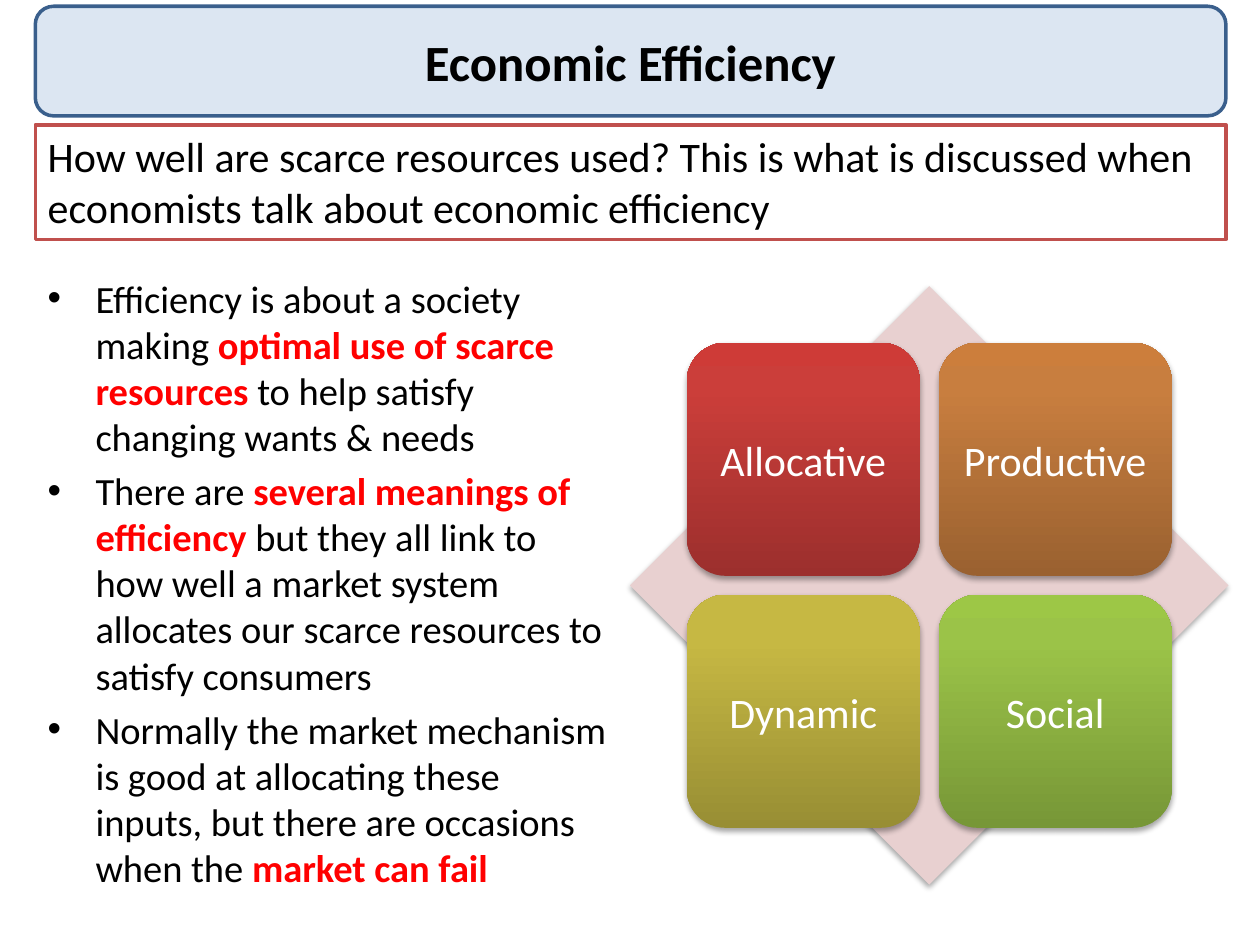
from copy import deepcopy
from pptx import Presentation
from pptx.dml.color import RGBColor
from pptx.enum.shapes import MSO_SHAPE
from pptx.enum.text import MSO_ANCHOR, PP_ALIGN
from pptx.oxml import parse_xml
from pptx.oxml.ns import nsdecls, qn
from pptx.util import Inches, Pt

RECT, ROUND, DIAMOND = (MSO_SHAPE.RECTANGLE, MSO_SHAPE.ROUNDED_RECTANGLE,
                        MSO_SHAPE.DIAMOND)
MIDDLE, TOP = MSO_ANCHOR.MIDDLE, MSO_ANCHOR.TOP
CENTER, LEFT = PP_ALIGN.CENTER, PP_ALIGN.LEFT

BLACK = RGBColor(0x00, 0x00, 0x00)
WHITE = RGBColor(0xFF, 0xFF, 0xFF)
RED = RGBColor(0xFF, 0x00, 0x00)
PALE = RGBColor(0xDC, 0xE6, 0xF2)
NAVY = RGBColor(0x3A, 0x5F, 0x8C)
BRICK = RGBColor(0xC0, 0x50, 0x4D)
PINK = RGBColor(0xE8, 0xD0, 0xD0)

TITLE = dict(name="Calibri", size=Pt(29), bold=True)
LEAD = dict(name="Calibri", size=Pt(24))
BODY = dict(name="Calibri", size=Pt(22))

# Plain and strong pieces alternate in each point
POINTS = [
    ["Efficiency is about a society making ", "optimal use of scarce resources ",
     "to help satisfy changing wants & needs"],
    ["There are ", "several meanings of efficiency ",
     "but they all link to how well a market system allocates our scarce "
     "resources to satisfy consumers"],
    ["Normally the market mechanism is good at allocating these inputs, "
     "but there are occasions when the ", "market can fail"],
]
# Label, then gradient colours from bottom to top
TILES = [
    ("Allocative", ("9C2F2D", "CB3E3A", "CE3B37")),
    ("Productive", ("9A6130", "C87E3F", "CC7E3C")),
    ("Dynamic", ("988E34", "C6B843", "C9BB41")),
    ("Social", ("779737", "9BC348", "9DC746")),
]
STOPS = (0, 0.8, 1)


def add_run(para, text, style, color):
    run = para.add_run()
    run.text = text
    for key, value in style.items():
        setattr(run.font, key, value)
    run.font.color.rgb = color


def add_box(shapes, kind, area, fill=None, line=None):
    box = shapes.add_shape(kind, *map(Inches, area))
    box.shadow.inherit = False
    if fill:
        box.fill.solid()
        box.fill.fore_color.rgb = fill
    if line:
        box.line.color.rgb = line
        box.line.width = Pt(2)
    else:
        box.line.fill.background()
    return box


def add_label(box, text, style, color, align, anchor):
    frame = box.text_frame
    frame.word_wrap = True
    frame.vertical_anchor = anchor
    para = frame.paragraphs[0]
    para.alignment = align
    add_run(para, text, style, color)


def add_shade(box):
    effects = box._element.spPr.find(qn("a:effectLst"))
    effects.append(parse_xml(
        f'<a:outerShdw {nsdecls("a")} blurRad="{Pt(3.1)}" dist="{Pt(1.8)}" '
        'dir="5400000" rotWithShape="0"><a:srgbClr val="000000">'
        '<a:alpha val="35000"/></a:srgbClr></a:outerShdw>'))


def add_blend(box, colors):
    box.fill.gradient()
    box.fill.gradient_angle = 90
    stops = next(box._element.spPr.iter(qn("a:gsLst")))
    stops.append(deepcopy(stops[-1]))
    for stop, place, color in zip(box.fill.gradient_stops, STOPS, colors):
        stop.position = place
        stop.color.rgb = RGBColor.from_string(color)


def add_points(shapes, area):
    frame = shapes.add_textbox(*map(Inches, area)).text_frame
    frame.word_wrap = True
    for i, point in enumerate(POINTS):
        para = frame.add_paragraph() if i else frame.paragraphs[0]
        props = para._p.get_or_add_pPr()
        props.set("marL", str(Inches(0.38)))
        props.set("indent", str(-Inches(0.38)))
        props.append(parse_xml(f'<a:buFont {nsdecls("a")} typeface="Arial"/>'))
        props.append(parse_xml(f'<a:buChar {nsdecls("a")} char="•"/>'))
        if i:
            para.space_before = Pt(4.4)
        for j, text in enumerate(point):
            strong = j % 2 == 1
            add_run(para, text, {**BODY, "bold": strong},
                    RED if strong else BLACK)


def add_matrix(shapes):
    group = shapes.add_group_shape().shapes
    add_shade(add_box(group, DIAMOND, (5, 2.27, 4.75, 4.75), PINK))
    for i, (text, colors) in enumerate(TILES):
        row, col = divmod(i, 2)
        tile = add_box(group, ROUND,
                       (5.45 + 2 * col, 2.72 + 2 * row, 1.85, 1.85))
        add_blend(tile, colors)
        add_shade(tile)
        add_label(tile, text, LEAD, WHITE, CENTER, MIDDLE)


def main():
    deck = Presentation()
    deck.slide_width, deck.slide_height = Inches(10), Inches(7.5)
    shapes = deck.slides.add_slide(deck.slide_layouts[6]).shapes

    # Title bar
    title = add_box(shapes, ROUND, (0.28, 0.05, 9.45, 0.87), PALE, NAVY)
    add_label(title, "Economic Efficiency", TITLE, BLACK, CENTER, MIDDLE)

    # Bullet points
    add_points(shapes, (0.28, 2.13, 4.65, 5.04))

    # Key question
    lead = add_box(shapes, RECT, (0.28, 0.99, 9.45, 0.91), WHITE, BRICK)
    add_label(lead, "How well are scarce resources used? This is what is "
              "discussed when economists talk about economic efficiency",
              LEAD, BLACK, LEFT, TOP)

    # Four kinds of efficiency
    add_matrix(shapes)

    deck.save("out.pptx")


if __name__ == "__main__":
    main()
